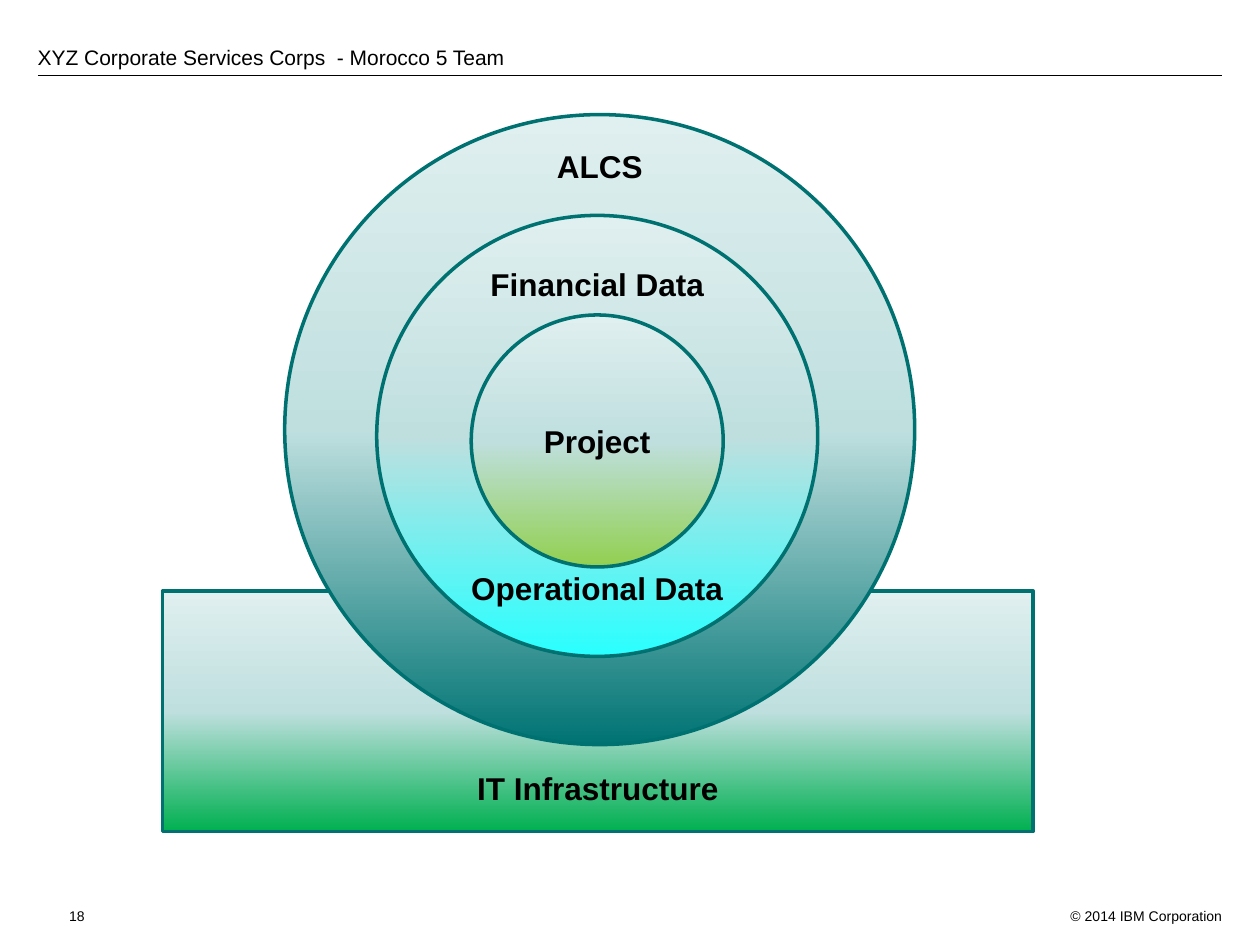
import copy

from pptx import Presentation
from pptx.dml.color import RGBColor
from pptx.enum import shapes, text
from pptx.oxml import ns, xmlchemy
from pptx.util import Inches, Pt

COLORS = {
    "text": "000000", "outline": "007171", "middle": "BFDFDF", "pale": "E0EFEF",
    "infrastructure": "00B050", "alcs": "007373", "data": "29FFFF", "project": "92D050",
}
LEFT, CENTER, RIGHT = text.PP_ALIGN.LEFT, text.PP_ALIGN.CENTER, text.PP_ALIGN.RIGHT
TOP, MIDDLE, BOTTOM = (text.MSO_ANCHOR.TOP, text.MSO_ANCHOR.MIDDLE,
                       text.MSO_ANCHOR.BOTTOM)


def color(name):
    return RGBColor.from_string(COLORS[name])


def write(sp, lines, size, align, anchor, bold=False):
    tf = sp.text_frame
    tf.word_wrap = True
    tf.vertical_anchor = anchor
    tf.text = "\n".join(lines)
    for p in tf.paragraphs:
        p.alignment = align
        for r in p.runs:
            r.font.name = "Arial"
            r.font.size = Pt(size)
            r.font.bold = bold
            r.font.color.rgb = color("text")
    return tf


prs = Presentation()
prs.slide_width, prs.slide_height = Inches(10), Inches(7.5)
s = prs.slides.add_slide(prs.slide_layouts[6])

# Header rule, header and footer
rule = s.shapes.add_connector(shapes.MSO_CONNECTOR.STRAIGHT,
                              Inches(0.3), Inches(0.6), Inches(9.7), Inches(0.6))
rule.line.color.rgb = color("text")
rule.line.width = Pt(0.75)
rule._element.spPr.append(xmlchemy.OxmlElement("a:effectLst"))

for line, box, size, align, anchor in [
    ("XYZ Corporate Services Corps  - Morocco 5 Team", (0.2, 0.15, 8.63, 0.4), 12, LEFT, BOTTOM),
    ("18", (0.45, 7.15, 0.4, 0.2), 8, LEFT, TOP),
    ("© 2014 IBM Corporation", (8.3, 7.15, 1.5, 0.2), 8, RIGHT, TOP),
]:
    sp = s.shapes.add_textbox(*map(Inches, box))
    tf = write(sp, [line], size, align, anchor)
    if anchor == BOTTOM:
        tf.margin_top = tf.margin_bottom = 0
        tf.paragraphs[0].space_after = Pt(9)

# Infrastructure base with the nested circles on top
RECT, OVAL = shapes.MSO_SHAPE.RECTANGLE, shapes.MSO_SHAPE.OVAL
layers = {}
for name, kind, box, lines, anchor in [
    ("infrastructure", RECT, (1.29, 4.69, 6.91, 1.91), ["IT Infrastructure"], BOTTOM),
    ("alcs", OVAL, (2.26, 0.91, 5, 5), [], MIDDLE),
    ("data", OVAL, (2.99, 1.71, 3.5, 3.5), ["Financial Data", "Operational Data"], MIDDLE),
    ("project", OVAL, (3.74, 2.5, 2, 2), ["Project"], MIDDLE),
]:
    sp = layers[name] = s.shapes.add_shape(kind, *map(Inches, box))
    sp.shadow.inherit = False
    sp.line.color.rgb = color("outline")
    sp.line.width = Pt(2)
    sp.fill.gradient()
    sp.fill.gradient_angle = 90
    stops = sp._element.spPr.find(ns.qn("a:gradFill")).find(ns.qn("a:gsLst"))
    stops.insert(1, copy.deepcopy(stops[0]))
    for stop, position, tone in zip(sp.fill.gradient_stops, (0, 0.5, 1),
                                    (name, "middle", "pale")):
        stop.position = position
        stop.color.rgb = color(tone)
    if lines:
        write(sp, lines, 18, CENTER, anchor, bold=True)

layers["infrastructure"].text_frame.margin_bottom = Inches(0.2)
layers["data"].text_frame.paragraphs[1].space_before = Pt(152)

label = s.shapes.add_textbox(Inches(3.76), Inches(1.12), Inches(2), Inches(0.4))
write(label, ["ALCS"], 18, CENTER, MIDDLE, bold=True)

prs.save("out.pptx")
